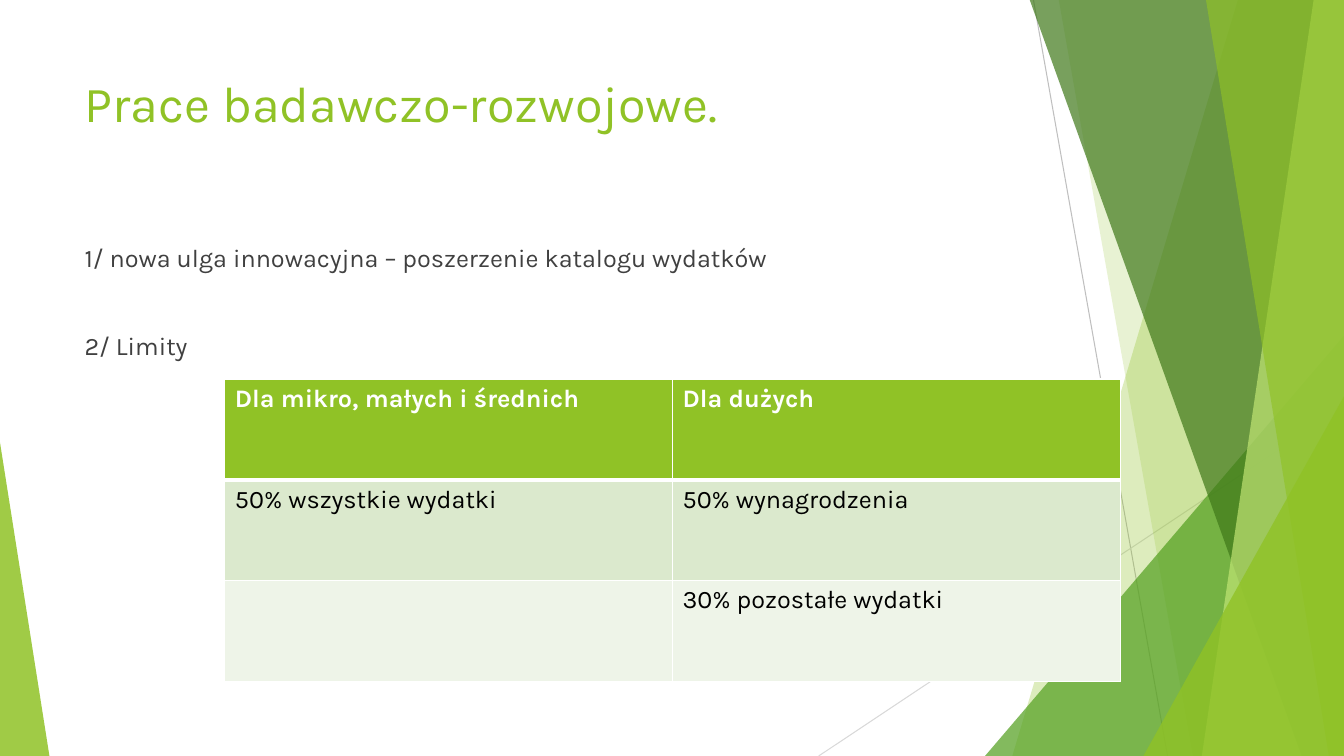
from dataclasses import dataclass

from lxml import etree
from pptx import Presentation
from pptx.dml.color import RGBColor
from pptx.enum.shapes import MSO_CONNECTOR, MSO_SHAPE
from pptx.enum.text import MSO_ANCHOR, PP_ALIGN
from pptx.oxml.ns import qn
from pptx.util import Inches, Pt

STRAIGHT = MSO_CONNECTOR.STRAIGHT
TRIANGLE = MSO_SHAPE.ISOSCELES_TRIANGLE
TOP = MSO_ANCHOR.TOP
LEFT = PP_ALIGN.LEFT
TITLE_ONLY = 5
WIDTH, HEIGHT = 13.33, 7.5
BLEED = -0.01


@dataclass(frozen=True)
class Theme:
    """Colours, font and type sizes of the slide."""
    font: str = "Karla"
    title_size: int = 36
    body_size: int = 18
    green: str = "90C226"
    leaf: str = "54A021"
    forest: str = "3F7819"
    lime: str = "C0E474"
    gray: str = "BFBFBF"
    pale_gray: str = "D9D9D9"
    ink: str = "404040"
    black: str = "000000"
    white: str = "FFFFFF"
    bands: tuple = ("DBE9CD", "EEF4E8")


THEME = Theme()


def style_text(para, size, color, bold=False):
    """Format every run of a paragraph."""
    para.alignment = LEFT
    for span in para.runs:
        span.font.name = THEME.font
        span.font.size = Pt(size)
        span.font.bold = bold
        span.font.color.rgb = RGBColor.from_string(color)


def paint(shape, color, opacity):
    """Fill a shape with a translucent colour and no outline."""
    shape.shadow.inherit = False
    shape.line.fill.background()
    shape.fill.solid()
    shape.fill.fore_color.rgb = RGBColor.from_string(color)
    tint = shape._element.spPr.find(qn("a:solidFill"))[0]
    etree.SubElement(tint, qn("a:alpha")).set("val", str(opacity * 1000))


def add_line(page, start, end, color):
    """Draw a thin straight line."""
    line = page.shapes.add_connector(STRAIGHT, *map(Inches, start + end))
    line.line.color.rgb = RGBColor.from_string(color)
    line.line.width = Pt(0.75)
    etree.SubElement(line._element.spPr, qn("a:effectLst"))


def add_shard(page, top_x, bottom_x, color, opacity):
    """Draw a full-height panel with a slanted left edge."""
    outline = page.shapes.build_freeform(Inches(top_x), Inches(BLEED))
    corners = [(WIDTH, BLEED), (WIDTH, HEIGHT), (bottom_x, HEIGHT)]
    outline.add_line_segments([(Inches(x), Inches(y)) for x, y in corners])
    paint(outline.convert_to_shape(), color, opacity)


def add_corner(page, left, top, width, apex, color, opacity):
    """Draw a triangle standing on the bottom edge of the slide."""
    box = map(Inches, (left, top, width, HEIGHT - top))
    corner = page.shapes.add_shape(TRIANGLE, *box)
    corner.adjustments[0] = apex
    paint(corner, color, opacity)


def add_backdrop(page):
    """Draw the green facets along the slide edges."""
    add_line(page, (10.25, 0), (11.58, HEIGHT), THEME.gray)
    add_line(page, (WIDTH, 4.03), (8.12, HEIGHT), THEME.pale_gray)
    add_shard(page, 12.28, 10.04, THEME.green, 30)
    add_shard(page, 10.5, 11.83, THEME.green, 20)
    add_corner(page, 9.77, 3.33, 3.56, 1, THEME.leaf, 72)
    add_shard(page, 10.21, 12.91, THEME.forest, 70)
    add_shard(page, 13.03, 11.92, THEME.lime, 70)
    add_shard(page, 11.96, 13.18, THEME.green, 65)
    add_corner(page, 11.34, 3.93, 1.99, 1, THEME.green, 80)
    add_corner(page, 0, 4.39, 0.49, 0, THEME.green, 85)


def set_title(page, text):
    """Place and format the title above the backdrop."""
    title = page.shapes.title
    title.left, title.top = Inches(0.74), Inches(0.67)
    title.width, title.height = Inches(9.4), Inches(1.44)
    title.text_frame.text = text
    title.text_frame.vertical_anchor = TOP
    style_text(title.text_frame.paragraphs[0], THEME.title_size, THEME.green)
    title._element.getparent().append(title._element)


def add_points(page, points):
    """Add the widely spaced points below the title."""
    box = page.shapes.add_textbox(*map(Inches, (0.74, 2.36, 9.4, 4.24)))
    box.text_frame.word_wrap = True
    box.text_frame.text = "\n".join(points)
    for index, para in enumerate(box.text_frame.paragraphs):
        para.space_before = Pt(41 if index else 10)
        style_text(para, THEME.body_size, THEME.ink)


def set_borders(cell, top, bottom):
    """Give a cell white borders of the given widths."""
    properties = cell._tc.get_or_add_tcPr()
    sides = (("a:lnL", 1), ("a:lnR", 1), ("a:lnT", top), ("a:lnB", bottom))
    for index, (side, width) in enumerate(sides):
        border = etree.Element(qn(side), w=str(Pt(width)))
        fill = etree.SubElement(border, qn("a:solidFill"))
        etree.SubElement(fill, qn("a:srgbClr"), val=THEME.white)
        properties.insert(index, border)


def add_limits(page, rows):
    """Add the table of limits with a green heading row."""
    count = len(rows)
    area = map(Inches, (2.23, 3.76, 8.88, count))
    table = page.shapes.add_table(count, len(rows[0]), *area).table
    for row_index, row in enumerate(rows):
        heading = row_index == 0
        fill = THEME.green if heading else THEME.bands[(row_index - 1) % 2]
        for column_index, text in enumerate(row):
            cell = table.cell(row_index, column_index)
            cell.text_frame.text = text
            cell.fill.solid()
            cell.fill.fore_color.rgb = RGBColor.from_string(fill)
            set_borders(cell, 3 if row_index == 1 else 1, 3 if heading else 1)
            style_text(cell.text_frame.paragraphs[0], THEME.body_size,
                       THEME.white if heading else THEME.black, heading)


def main():
    """Build and save the slide."""
    deck = Presentation()
    deck.slide_width, deck.slide_height = Inches(WIDTH), Inches(HEIGHT)
    page = deck.slides.add_slide(deck.slide_layouts[TITLE_ONLY])
    add_backdrop(page)
    set_title(page, "Prace badawczo-rozwojowe.")
    add_points(page, [
        "1/ nowa ulga innowacyjna – poszerzenie katalogu wydatków",
        "2/ Limity",
    ])
    add_limits(page, [
        ("Dla mikro, małych i średnich", "Dla dużych"),
        ("50% wszystkie wydatki", "50% wynagrodzenia"),
        ("", "30% pozostałe wydatki"),
    ])
    deck.save("out.pptx")


if __name__ == "__main__":
    main()
